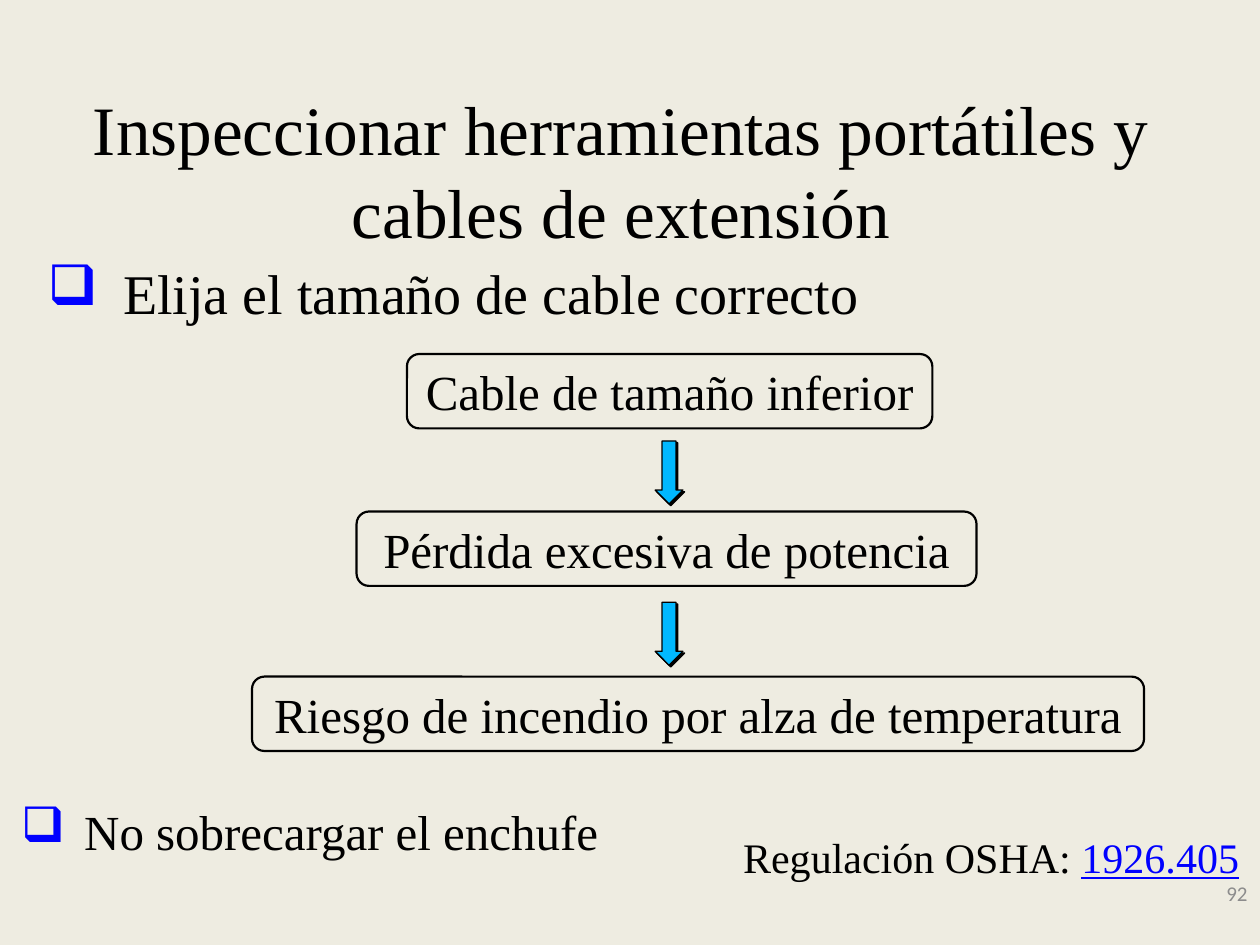
import lxml.etree
import pptx
import pptx.dml.color
import pptx.enum.shapes
import pptx.enum.text
import pptx.oxml.ns
import pptx.util

COLORS = {"background": "EEECE1", "ink": "000000", "accent": "0000FF",
          "arrow": "00B8FF", "number": "8C8C8C"}
COLUMNS, ROWS = 100, 75
SLIDE_WIDTH, SLIDE_HEIGHT = pptx.util.Inches(10), pptx.util.Inches(7.5)
ALIGN = pptx.enum.text.PP_ALIGN
ANCHOR = pptx.enum.text.MSO_ANCHOR
SHAPE = pptx.enum.shapes.MSO_SHAPE


def color(name):
    """Return the named colour."""
    return pptx.dml.color.RGBColor.from_string(COLORS[name])


def place(left, top, width, height):
    """Turn grid columns and rows into slide lengths."""
    column, row = SLIDE_WIDTH / COLUMNS, SLIDE_HEIGHT / ROWS
    return [round(cells * unit) for cells, unit in
            zip((left, top, width, height), (column, row, column, row))]


def add_xml(parent, tag, **attributes):
    """Append a DrawingML element and return it."""
    return lxml.etree.SubElement(parent, pptx.oxml.ns.qn(tag), attributes)


def write_text(shape, text, size=28, font="Times New Roman", ink="ink",
               align=ALIGN.LEFT, anchor=ANCHOR.TOP, wrap=True, link=""):
    """Write one formatted paragraph, with an optional underlined ending."""
    frame = shape.text_frame
    frame.word_wrap, frame.vertical_anchor = wrap, anchor
    paragraph = frame.paragraphs[0]
    paragraph.alignment = align
    for words, run_ink, underline in ((text, ink, None), (link, "accent", True)):
        if words:
            run = paragraph.add_run()
            run.text = words
            run.font.size, run.font.name = pptx.util.Pt(size), font
            run.font.color.rgb, run.font.underline = color(run_ink), underline
    return paragraph


def add_label(slide, box, text, **text_format):
    """Place a text box and return its paragraph."""
    return write_text(slide.shapes.add_textbox(*place(*box)), text, **text_format)


def add_bullet(slide, box, text, indent, **text_format):
    """Place a paragraph with a blue square bullet and a hanging indent."""
    properties = add_label(slide, box, text, **text_format)._p.get_or_add_pPr()
    hang = place(indent, 0, 0, 0)[0]
    properties.set("marL", str(hang))
    properties.set("indent", str(-hang))
    add_xml(add_xml(properties, "a:buClr"), "a:srgbClr", val=COLORS["accent"])
    add_xml(properties, "a:buSzPts", val="2800")
    add_xml(properties, "a:buChar", char="❑")


def add_step(slide, box, text):
    """Place an outlined rounded step of the chain."""
    step = slide.shapes.add_shape(SHAPE.ROUNDED_RECTANGLE, *place(*box))
    step.shadow.inherit = False
    step.fill.background()
    step.line.color.rgb, step.line.width = color("ink"), pptx.util.Pt(1.25)
    write_text(step, text, align=ALIGN.CENTER, anchor=ANCHOR.MIDDLE, wrap=False)


def add_arrow(slide, box):
    """Place a down arrow with a hard shadow."""
    arrow = slide.shapes.add_shape(SHAPE.DOWN_ARROW, *place(*box))
    arrow.fill.solid()
    arrow.fill.fore_color.rgb = color("arrow")
    arrow.line.color.rgb, arrow.line.width = color("ink"), pptx.util.Pt(0.75)
    effects = add_xml(arrow._element.spPr, "a:effectLst")
    shadow = add_xml(effects, "a:outerShdw", dist=str(pptx.util.Pt(1.4)),
                     dir="2700000", algn="ctr", rotWithShape="0")
    add_xml(shadow, "a:srgbClr", val=COLORS["ink"])


def add_chain(slide, box):
    """Place the cause and effect chain inside its box."""
    left, top, width, height = box
    step_height = 5.9
    steps = [("Cable de tamaño inferior", 12.3, 0, 41.7),
             ("Pérdida excesiva de potencia", 8.3, 12.5, 49.2),
             ("Riesgo de incendio por alza de temperatura", 0,
              height - step_height, width)]
    for text, across, down, step_width in steps:
        add_step(slide, (left + across, top + down, step_width, step_height), text)
    for down in (6.9, 19.7):
        add_arrow(slide, (left + 32, top + down, 2.2, 5))


def add_footer(slide, box):
    """Place the regulation reference and the slide number."""
    left, top, width, height = box
    add_label(slide, (left, top, width, 5), "Regulación OSHA: ", size=24,
              wrap=False, link="1926.405")
    add_label(slide, (left + 19.5, top + height - 4, 22.5, 4), "92", size=12,
              font="Calibri", ink="number", align=ALIGN.RIGHT, anchor=ANCHOR.MIDDLE)


def main():
    """Build and save the slide."""
    presentation = pptx.Presentation()
    presentation.slide_width, presentation.slide_height = SLIDE_WIDTH, SLIDE_HEIGHT
    slide = presentation.slides.add_slide(presentation.slide_layouts[6])
    slide.background.fill.solid()
    slide.background.fill.fore_color.rgb = color("background")
    add_label(slide, (1.1, 10.3, 96.4, 6.2),
              "Inspeccionar herramientas portátiles y cables de extensión",
              size=39.6, align=ALIGN.CENTER, anchor=ANCHOR.MIDDLE)
    add_bullet(slide, (2.8, 20, 67, 6.4), "Elija el tamaño de cable correcto",
               indent=6, size=32)
    add_chain(slide, (20, 28.1, 70.8, 31.5))
    add_bullet(slide, (0.7, 63.1, 51.3, 5.7), "No sobrecargar el enchufe",
               indent=5, align=ALIGN.JUSTIFY)
    add_footer(slide, (58, 65.5, 41.7, 7.4))
    presentation.save("out.pptx")


if __name__ == "__main__":
    main()
